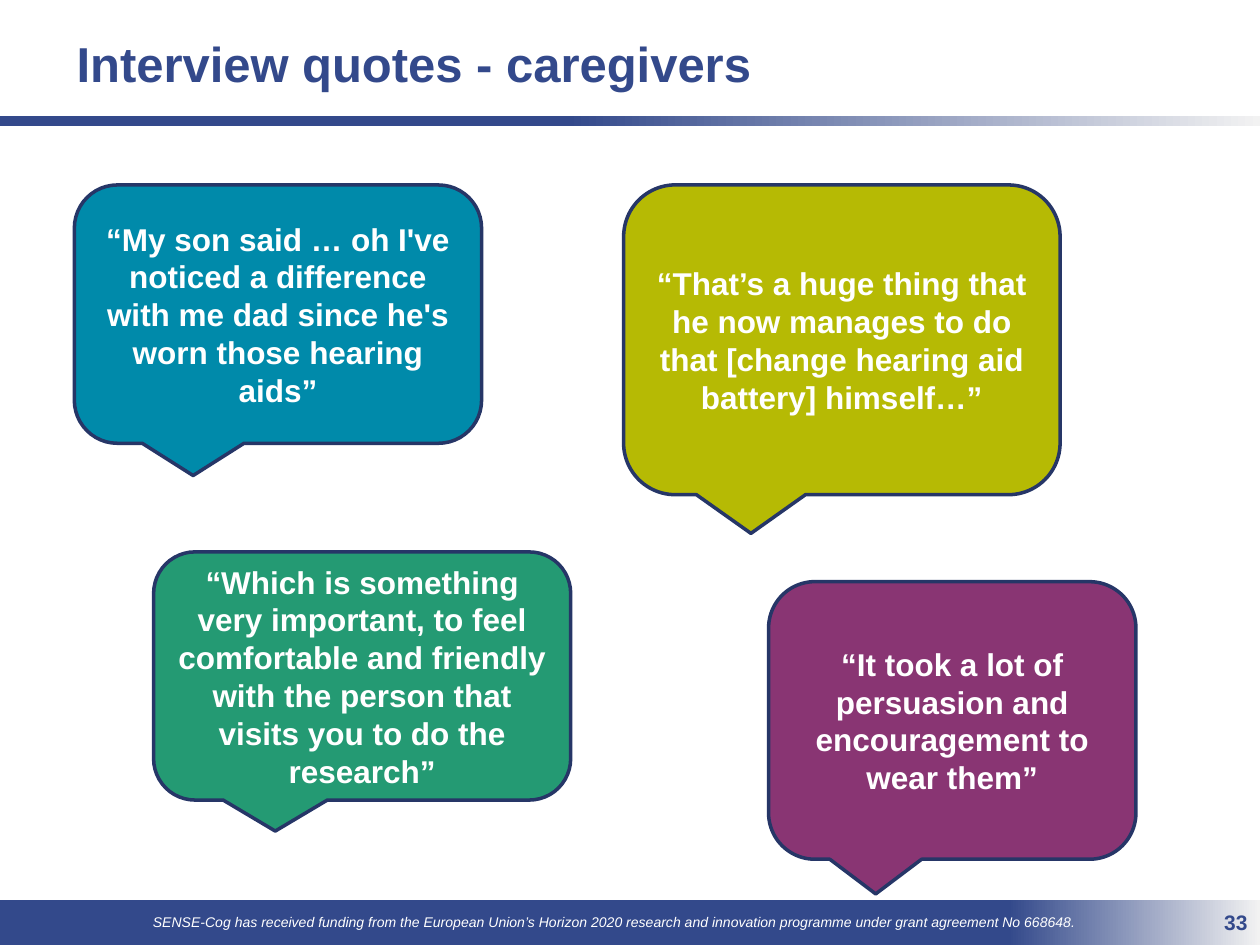
"""Build the caregiver interview quotes slide."""
from pptx import Presentation
from pptx.dml.color import RGBColor
from pptx.enum import shapes, text
from pptx.util import Pt

NAVY = RGBColor(0x33, 0x49, 0x8B)
OUTLINE = RGBColor(0x26, 0x36, 0x67)
PALE = RGBColor(0xF2, 0xF2, 0xF2)
WHITE = RGBColor(0xFF, 0xFF, 0xFF)
BLUE = RGBColor(0x00, 0x8A, 0xAA)
OLIVE = RGBColor(0xB6, 0xBA, 0x04)
GREEN = RGBColor(0x24, 0x9A, 0x73)
PURPLE = RGBColor(0x89, 0x35, 0x73)

LEFT, CENTER, RIGHT = text.PP_ALIGN.LEFT, text.PP_ALIGN.CENTER, text.PP_ALIGN.RIGHT
WIDTH, HEIGHT = 720, 540
FOOTER_HEIGHT = 25.9
FOOTER_TOP = HEIGHT - FOOTER_HEIGHT

QUOTES = [
    ((42.5, 105.7, 232.7, 147.6), BLUE,
     "“My son said … oh I've noticed a difference with me dad since he's worn those hearing aids”"),
    ((356.4, 105.7, 249.4, 177), OLIVE,
     "“That’s a huge thing that he now manages to do that [change hearing aid battery] himself…”"),
    ((87.8, 315.4, 238.3, 141.8), GREEN,
     "“Which is something very important, to feel comfortable and friendly with the person "
     "that visits you to do the research”"),
    ((439.2, 332.4, 209.9, 158.6), PURPLE,
     "“It took a lot of persuasion and encouragement to wear them”"),
]


def write(shape, words, size, color, align, bold=True, italic=False):
    """Put one formatted, vertically centred paragraph into a shape."""
    frame = shape.text_frame
    frame.text = words
    frame.word_wrap = True
    frame.vertical_anchor = text.MSO_ANCHOR.MIDDLE
    paragraph = frame.paragraphs[0]
    paragraph.alignment = align
    font = paragraph.runs[0].font
    font.name, font.size = "Arial", Pt(size)
    font.bold, font.italic = bold, italic
    font.color.rgb = color


def add_band(slide, top, height, solid_until):
    """Add a full-width band that fades from navy to pale grey."""
    band = slide.shapes.add_shape(
        shapes.MSO_SHAPE.RECTANGLE, Pt(0), Pt(top), Pt(WIDTH), Pt(height))
    band.shadow.inherit = False
    band.line.fill.background()
    band.fill.gradient()
    band.fill.gradient_angle = 0
    stops = zip(band.fill.gradient_stops, (solid_until, 1), (NAVY, PALE))
    for stop, position, color in stops:
        stop.position = position
        stop.color.rgb = color


def add_label(slide, box, words, size, color, align, **style):
    """Add a text box."""
    label = slide.shapes.add_textbox(*map(Pt, box))
    write(label, words, size, color, align, **style)


def add_quote(slide, box, color, words):
    """Add a speech bubble holding a quote."""
    bubble = slide.shapes.add_shape(
        shapes.MSO_SHAPE.ROUNDED_RECTANGULAR_CALLOUT, *map(Pt, box))
    bubble.shadow.inherit = False
    bubble.fill.solid()
    bubble.fill.fore_color.rgb = color
    bubble.line.color.rgb = OUTLINE
    bubble.line.width = Pt(2)
    write(bubble, words, 18, WHITE, CENTER)


def main():
    """Build and save the slide."""
    presentation = Presentation()
    presentation.slide_width, presentation.slide_height = Pt(WIDTH), Pt(HEIGHT)
    slide = presentation.slides.add_slide(presentation.slide_layouts[6])

    add_band(slide, FOOTER_TOP, FOOTER_HEIGHT, 0.8)
    add_band(slide, 66.2, 5.8, 0.45)
    add_label(slide, (42.5, FOOTER_TOP, 617.8, FOOTER_HEIGHT),
              "SENSE-Cog has received funding from the European Union’s Horizon 2020 research "
              "and innovation programme under grant agreement No 668648.",
              8, WHITE, CENTER, bold=False, italic=True)
    add_label(slide, (36.7, 6.5, 499.7, 59), "Interview quotes - caregivers", 28, NAVY, LEFT)
    add_label(slide, (659.5, FOOTER_TOP, 60.5, FOOTER_HEIGHT), "33", 12, NAVY, RIGHT)
    for box, color, words in QUOTES:
        add_quote(slide, box, color, words)

    presentation.save("out.pptx")


if __name__ == "__main__":
    main()
